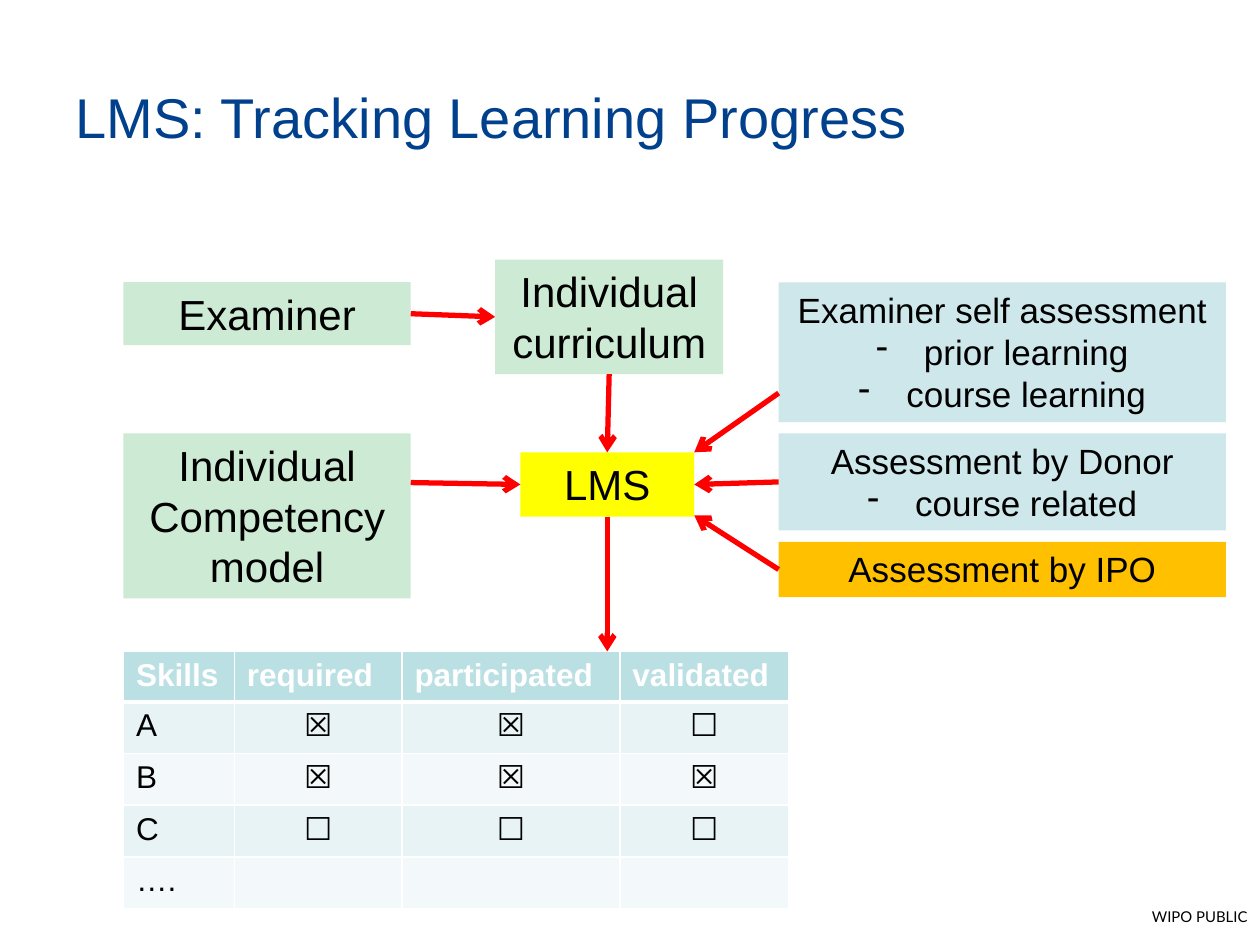
from typing import NamedTuple, Optional

from lxml.etree import SubElement
from pptx import Presentation
from pptx.dml.color import RGBColor
from pptx.enum.shapes import MSO_CONNECTOR, MSO_SHAPE
from pptx.enum.text import MSO_ANCHOR, PP_ALIGN
from pptx.oxml.ns import qn
from pptx.util import Inches, Pt

RED, BLACK, WHITE = "FF0000", "000000", "FFFFFF"
GREEN, BLUE, GOLD, YELLOW = "CDEBD4", "CEE7EA", "FFC000", "FFFF00"
TOP, LEFT, BOTTOM, RIGHT = range(4)


class Box(NamedTuple):
    name: str
    x: float
    y: float
    w: float
    h: float
    fill: str
    lines: list
    size: int = 24


class Arrow(NamedTuple):
    start: tuple
    end: tuple
    tail: Optional[tuple] = None  # (box name, side) joined at the start
    head: Optional[tuple] = None  # (box name, side) joined at the end


BOXES = [
    Box("exam", 0.98, 2.24, 2.28, 0.5, GREEN, ["Examiner"]),
    Box("plan", 3.93, 2.06, 1.81, 0.91, GREEN, ["Individual curriculum"]),
    Box("model", 0.98, 3.44, 2.28, 1.31, GREEN, ["Individual Competency model"]),
    Box("lms", 4.13, 3.59, 1.38, 0.51, YELLOW, ["LMS"]),
    Box("self", 6.18, 2.24, 3.55, 1.11, BLUE,
        ["Examiner self assessment", "prior learning", "course learning"], 20),
    Box("donor", 6.18, 3.44, 3.55, 0.77, BLUE,
        ["Assessment by Donor", "course related"], 20),
    Box("ipo", 6.18, 4.3, 3.55, 0.44, GOLD, ["Assessment by IPO"], 20),
]

ARROWS = [
    Arrow((3.26, 2.49), (3.93, 2.52), ("exam", RIGHT), ("plan", LEFT)),
    Arrow((4.83, 2.97), (4.82, 3.59), ("plan", BOTTOM), ("lms", TOP)),
    Arrow((3.26, 3.83), (4.13, 3.84), head=("lms", LEFT)),
    Arrow((4.82, 4.1), (4.82, 5.17), tail=("lms", BOTTOM)),
    Arrow((6.18, 3.12), (5.51, 3.59)),
    Arrow((6.18, 3.82), (5.51, 3.84), ("donor", LEFT), ("lms", RIGHT)),
    Arrow((6.18, 4.52), (5.51, 4.09), tail=("ipo", LEFT)),
]

COLS = [0.88, 1.33, 1.73, 1.34]
ROWS = [
    ["Skills", "required", "participated", "validated"],
    ["A", "☒", "☒", "☐"],
    ["B", "☒", "☒", "☒"],
    ["C", "☐", "☐", "☐"],
    ["….", "", "", ""],
]


def color(code: str) -> RGBColor:
    return RGBColor.from_string(code)


def write(par, text: str, size: float = 18, ink: str = BLACK, font: str = "Arial",
          bold: bool = False, align=PP_ALIGN.LEFT, dash: bool = False) -> None:
    par.alignment = align
    if dash:
        props = par._p.get_or_add_pPr()
        props.set("marL", str(Inches(0.38)))
        props.set("indent", str(Inches(-0.38)))
        SubElement(props, qn("a:buChar"), char="-")
    if text:
        run = par.add_run()
        run.text = text
        run.font.size, run.font.name, run.font.bold = Pt(size), font, bold
        run.font.color.rgb = color(ink)


def label(slide, x: float, y: float, w: float, h: float, text: str, **style) -> None:
    frame = slide.shapes.add_textbox(Inches(x), Inches(y), Inches(w), Inches(h)).text_frame
    frame.word_wrap = True
    frame.vertical_anchor = MSO_ANCHOR.MIDDLE
    write(frame.paragraphs[0], text, **style)


def draw_box(slide, box: Box):
    shape = slide.shapes.add_shape(MSO_SHAPE.RECTANGLE, Inches(box.x), Inches(box.y),
                                   Inches(box.w), Inches(box.h))
    shape.shadow.inherit = False
    shape.fill.solid()
    shape.fill.fore_color.rgb = color(box.fill)
    shape.line.fill.background()
    frame = shape.text_frame
    frame.word_wrap = True
    frame.vertical_anchor = MSO_ANCHOR.TOP
    for i, text in enumerate(box.lines):
        par = frame.add_paragraph() if i else frame.paragraphs[0]
        write(par, text, size=box.size, align=PP_ALIGN.CENTER, dash=i > 0)
    return shape


def draw_arrow(slide, arrow: Arrow, shapes: dict) -> None:
    ends = [Inches(v) for v in arrow.start + arrow.end]
    link = slide.shapes.add_connector(MSO_CONNECTOR.STRAIGHT, *ends)
    if arrow.tail:
        name, side = arrow.tail
        link.begin_connect(shapes[name], side)
    if arrow.head:
        name, side = arrow.head
        link.end_connect(shapes[name], side)
    link.line.color.rgb = color(RED)
    link.line.width = Pt(3)
    SubElement(link.line._get_or_add_ln(), qn("a:tailEnd"), type="arrow")
    SubElement(link._element.spPr, qn("a:effectLst"))


def border(cell, side: str, width: float) -> None:
    line = SubElement(cell._tc.get_or_add_tcPr(), qn(f"a:ln{side}"), w=str(Pt(width)))
    fill = SubElement(line, qn("a:solidFill"))
    SubElement(fill, qn("a:srgbClr"), val=WHITE)


def draw_table(slide) -> None:
    table = slide.shapes.add_table(len(ROWS), len(COLS), Inches(0.98), Inches(5.17),
                                   Inches(sum(COLS)), Inches(2.04)).table
    table.horz_banding = False
    for col, width in zip(table.columns, COLS):
        col.width = Inches(width)
    for r, row in enumerate(ROWS):
        table.rows[r].height = Inches(0.41 if r else 0.4)
        back = ("E7F3F4" if r % 2 else "F3F9FA") if r else "BBE0E3"
        for c, text in enumerate(row):
            cell = table.cell(r, c)
            # The rule under the header is heavier
            widths = {"L": 1, "R": 1, "T": 3 if r == 1 else 1, "B": 1 if r else 3}
            for side, width in widths.items():
                border(cell, side, width)
            cell.fill.solid()
            cell.fill.fore_color.rgb = color(back)
            write(cell.text_frame.paragraphs[0], text, bold=r == 0,
                  ink=BLACK if r else WHITE,
                  align=PP_ALIGN.CENTER if r and c else PP_ALIGN.LEFT)


def main() -> None:
    deck = Presentation()
    deck.slide_width, deck.slide_height = Inches(10), Inches(7.5)
    slide = deck.slides.add_slide(deck.slide_layouts[6])

    # Title and footer
    label(slide, 0.5, 0.3, 9, 1.25, "LMS: Tracking Learning Progress",
          size=32, ink="00408C")
    label(slide, 0, 7.15, 10, 0.24, "WIPO PUBLIC", size=8.5, font="Lato",
          align=PP_ALIGN.RIGHT)

    # Skills table
    draw_table(slide)

    # Flow around the LMS
    shapes = {box.name: draw_box(slide, box) for box in BOXES}
    for arrow in ARROWS:
        draw_arrow(slide, arrow, shapes)

    deck.save("out.pptx")


if __name__ == "__main__":
    main()
